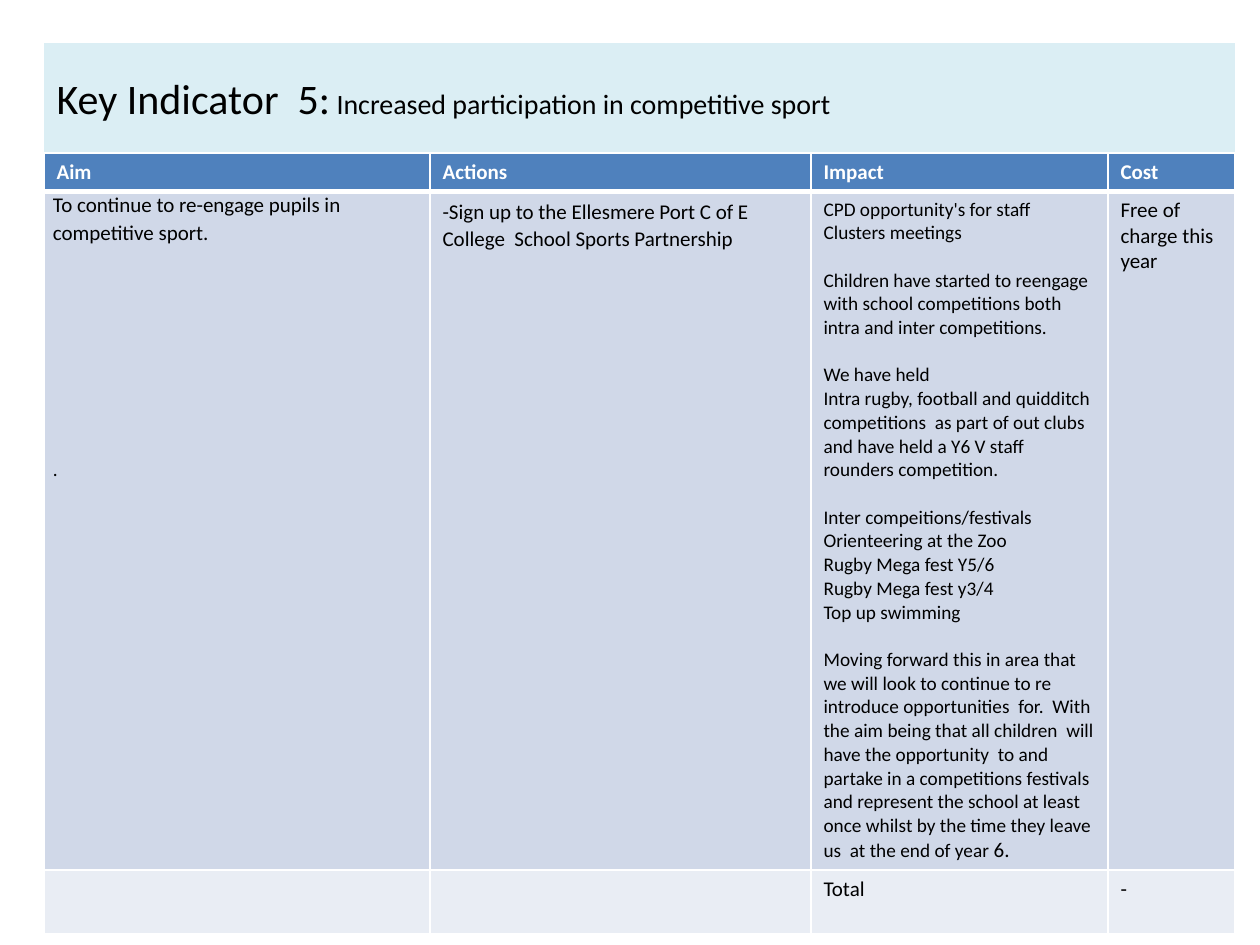
from pptx import Presentation
from pptx.dml.color import RGBColor
from pptx.enum.text import MSO_ANCHOR, MSO_AUTO_SIZE, PP_ALIGN
from pptx.oxml import parse_xml
from pptx.oxml.ns import nsdecls
from pptx.util import Emu, Pt

LEFT, MIDDLE, NO_FIT = PP_ALIGN.LEFT, MSO_ANCHOR.MIDDLE, MSO_AUTO_SIZE.NONE

BLACK = RGBColor(0x00, 0x00, 0x00)
WHITE = RGBColor(0xFF, 0xFF, 0xFF)
TITLE_FILL = RGBColor(0xDB, 0xEE, 0xF4)
ROW_FILLS = [RGBColor(0x4F, 0x81, 0xBD), RGBColor(0xD0, 0xD8, 0xE8), RGBColor(0xE9, 0xED, 0xF4)]

TITLE = [("Key Indicator  5:", 24), (" Increased participation in competitive sport", 16)]
HEADERS = ["Aim", "Actions", "Impact", "Cost"]

# A paragraph is (runs, format); a run is (text, size in points)
LOOSE = {"line_spacing": 1.07, "space_after": Pt(8)}
NEW_TOPIC = {"space_before": Pt(13.4)}
AIM = [
    ([("To continue to re-engage pupils in competitive sport.", 12)], LOOSE),
    ([(".", 11)], {**LOOSE, "space_before": Pt(112)}),
]
ACTIONS = [([("-Sign up to the Ellesmere Port C of E College  School Sports Partnership", 12)], LOOSE)]
IMPACT_TOPICS = [
    ["CPD opportunity's for staff", "Clusters meetings"],
    ["Children have started to reengage with school competitions both intra and inter competitions."],
    ["We have held",
     "Intra rugby, football and quidditch competitions  as part of out clubs and have held "
     "a Y6 V staff rounders competition."],
    ["Inter compeitions/festivals", "Orienteering at the Zoo", "Rugby Mega fest Y5/6",
     "Rugby Mega fest y3/4", "Top up swimming"],
]
OUTLOOK = [
    ("Moving forward this in area that we will look to continue to re introduce opportunities  for.  "
     "With the aim being that all children  will have the opportunity  to and partake in a "
     "competitions festivals and represent the school at least once whilst by the time they leave "
     "us  at the end of year ", 11),
    ("6.", 12),
]
IMPACT = [([(line, 11)], NEW_TOPIC if t and not i else {})
          for t, topic in enumerate(IMPACT_TOPICS) for i, line in enumerate(topic)]
IMPACT.append((OUTLOOK, NEW_TOPIC))


def plain(text):
    return [([(text, 12)], {})]


ROWS = [
    [plain(h) for h in HEADERS],
    [AIM, ACTIONS, IMPACT, plain("Free of charge this year")],
    [[], [], plain("Total"), plain("-")],
]

PX = 914400 // 126
X, TITLE_Y, TABLE_Y = 44, 43, 153
COLS = [386, 381, 297, 127]
HEIGHTS = [38, 679, 64]


def px(n):
    return Emu(n * PX)


def add_runs(p, runs, color, bold=False):
    for text, size in runs:
        r = p.add_run()
        r.text = text
        r.font.name, r.font.size, r.font.bold = "Calibri", Pt(size), bold
        r.font.color.rgb = color


def fill_text(tf, paragraphs, color, bold):
    for i, (runs, fmt) in enumerate(paragraphs):
        p = tf.add_paragraph() if i else tf.paragraphs[0]
        for name, value in fmt.items():
            setattr(p, name, value)
        add_runs(p, runs, color, bold)


def set_borders(cell, widths):
    for side, width in widths.items():
        cell._tc.get_or_add_tcPr().append(parse_xml(
            f'<a:ln{side} {nsdecls("a")} w="{Pt(width)}"><a:solidFill>'
            f'<a:srgbClr val="{WHITE}"/></a:solidFill></a:ln{side}>'))


prs = Presentation()
prs.slide_width, prs.slide_height = px(1260), px(945)
s = prs.slides.add_slide(prs.slide_layouts[5])

title = s.shapes.title
title.left, title.top, title.width, title.height = map(px, (X, TITLE_Y, sum(COLS), TABLE_Y - TITLE_Y))
title.fill.solid()
title.fill.fore_color.rgb = TITLE_FILL
tf = title.text_frame
tf.auto_size, tf.vertical_anchor, tf.word_wrap = NO_FIT, MIDDLE, True
tf.paragraphs[0].alignment = LEFT
add_runs(tf.paragraphs[0], TITLE, BLACK)

table = s.shapes.add_table(len(ROWS), len(COLS), px(X), px(TABLE_Y),
                           px(sum(COLS)), px(sum(HEIGHTS))).table
for column, width in zip(table.columns, COLS):
    column.width = px(width)
for r, (row, height) in enumerate(zip(ROWS, HEIGHTS)):
    table.rows[r].height = px(height)
    header = r == 0
    for c, paragraphs in enumerate(row):
        cell = table.cell(r, c)
        set_borders(cell, {"L": 1, "R": 1, "T": 3 if r == 1 else 1, "B": 3 if header else 1})
        cell.fill.solid()
        cell.fill.fore_color.rgb = ROW_FILLS[r]
        fill_text(cell.text_frame, paragraphs, WHITE if header else BLACK, header)

aim = table.cell(1, 0)
aim.margin_left = aim.margin_right = px(9)
aim.margin_top = aim.margin_bottom = 0

prs.save("out.pptx")
